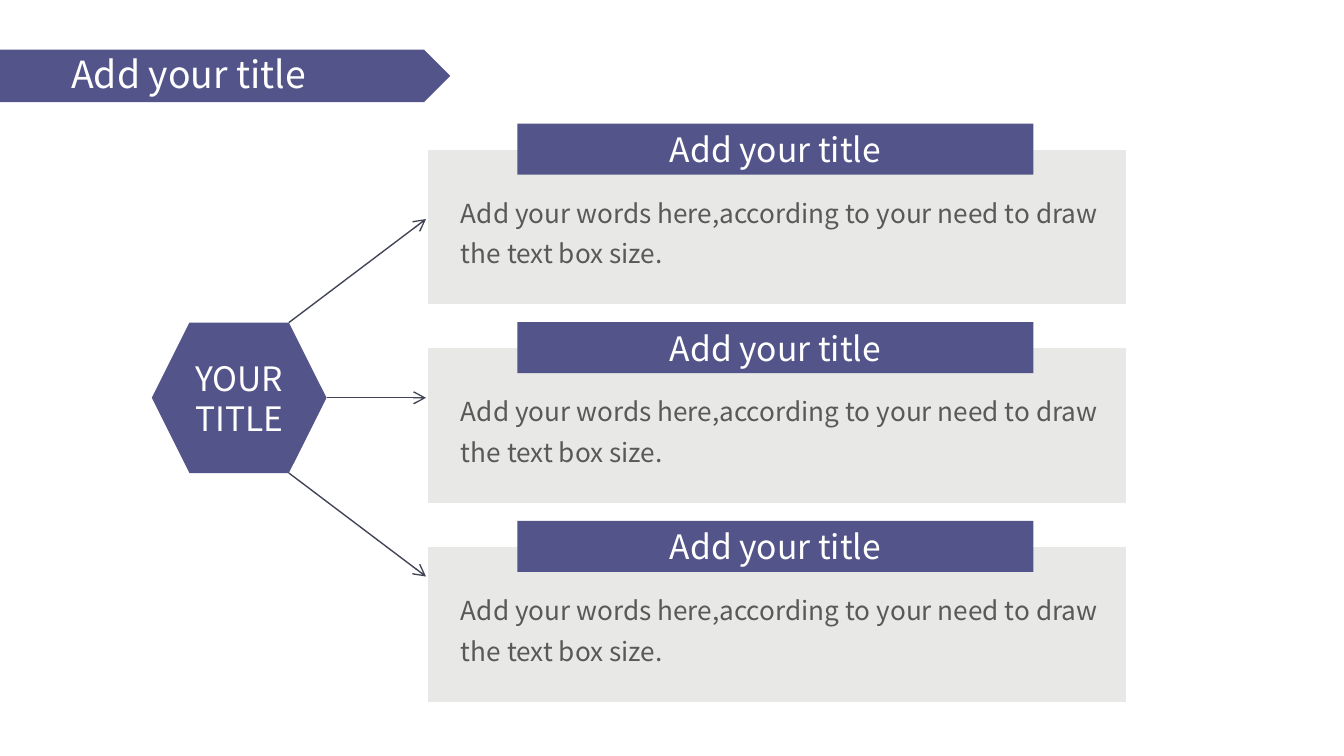
from dataclasses import dataclass
from typing import Optional

from lxml import etree
from pptx import Presentation
from pptx.dml.color import RGBColor
from pptx.enum import shapes, text
from pptx.oxml import ns
from pptx.util import Pt


@dataclass(frozen=True)
class Theme:
    font: str = "Noto Sans CJK JP"
    accent: RGBColor = RGBColor(0x53, 0x54, 0x8A)
    panel: RGBColor = RGBColor(0xE8, 0xE8, 0xE6)
    white: RGBColor = RGBColor(0xFF, 0xFF, 0xFF)
    arrow: RGBColor = RGBColor(0x41, 0x44, 0x55)
    body: RGBColor = RGBColor(0x59, 0x59, 0x59)
    title_size: float = 20
    heading_size: float = 18
    body_size: float = 14


@dataclass(frozen=True)
class Box:
    left: float
    top: float
    width: float
    height: float

    def lengths(self) -> list[Pt]:
        return [Pt(value) for value in (self.left, self.top, self.width, self.height)]


@dataclass(frozen=True)
class Card:
    heading: str
    body: str


@dataclass(frozen=True)
class Arrow:
    start: tuple[float, float]
    end: tuple[float, float]


THEME = Theme()
BODY = "Add your words here,according to your need to draw the text box size."
CARDS = [Card("Add your title", BODY)] * 3
FIRST_CARD_TOP, CARD_PITCH = 66.24, 106.4
HUB = Box(81.36, 172.8, 93.6, 80.64)
HUB_MIDDLE = HUB.top + HUB.height / 2
HUB_CORNER = HUB.left + HUB.width - HUB.height / 4
ARROW_END, ARROW_RISE = 228.24, 95.76
ARROWS = [
    Arrow((HUB_CORNER, HUB.top), (ARROW_END, HUB_MIDDLE - ARROW_RISE)),
    Arrow((HUB.left + HUB.width, HUB_MIDDLE), (ARROW_END, HUB_MIDDLE)),
    Arrow((HUB_CORNER, HUB.top + HUB.height), (ARROW_END, HUB_MIDDLE + ARROW_RISE)),
]


def write(shape, content: str, size: float, color: RGBColor, align, anchor,
          inset: tuple[float, float] = (5.76, 2.88), spacing: float = 1.0) -> None:
    frame = shape.text_frame
    frame.word_wrap = True
    frame.auto_size = text.MSO_AUTO_SIZE.NONE
    frame.vertical_anchor = anchor
    frame.margin_left = frame.margin_right = Pt(inset[0])
    frame.margin_top = frame.margin_bottom = Pt(inset[1])
    frame.text = content
    paragraph = frame.paragraphs[0]
    paragraph.alignment = align
    paragraph.line_spacing = spacing
    paragraph.font.name = THEME.font
    paragraph.font.size = Pt(size)
    paragraph.font.color.rgb = color


def add_block(slide, kind, box: Box, fill: RGBColor, outline: Optional[RGBColor] = None):
    shape = slide.shapes.add_shape(kind, *box.lengths())
    shape.shadow.inherit = False
    shape.fill.solid()
    shape.fill.fore_color.rgb = fill
    if outline is None:
        shape.line.fill.background()
    else:
        shape.line.color.rgb = outline
        shape.line.width = Pt(2)
    return shape


def add_label(slide, kind, box: Box, content: str) -> None:
    shape = add_block(slide, kind, box, THEME.accent)
    write(shape, content, THEME.heading_size, THEME.white,
          text.PP_ALIGN.CENTER, text.MSO_ANCHOR.MIDDLE)


def add_title(slide, content: str) -> None:
    title = slide.shapes.title
    title.left, title.top, title.width, title.height = Box(30.96, 23.76, 194.4, 33.84).lengths()
    write(title, content, THEME.title_size, THEME.white,
          text.PP_ALIGN.LEFT, text.MSO_ANCHOR.TOP, inset=(7.2, 3.6))
    ribbon = add_block(slide, shapes.MSO_SHAPE.PENTAGON, Box(0, 26.64, 241.2, 28.08), THEME.accent)
    title.element.addprevious(ribbon.element)


def add_card(slide, card: Card, top: float) -> None:
    """Draw a panel whose heading bar straddles its upper edge; top is the bar's top."""
    rectangle = shapes.MSO_SHAPE.RECTANGLE
    add_block(slide, rectangle, Box(228.24, top + 12.96, 375.84, 84.96), THEME.panel, THEME.white)
    add_label(slide, rectangle, Box(277.2, top, 276.48, 27.36), card.heading)
    body = slide.shapes.add_textbox(*Box(241.2, top + 31.4, 357.12, 49.68).lengths())
    write(body, card.body, THEME.body_size, THEME.body,
          text.PP_ALIGN.LEFT, text.MSO_ANCHOR.TOP, spacing=1.3)


def add_arrow(slide, arrow: Arrow) -> None:
    points = [Pt(value) for value in (*arrow.start, *arrow.end)]
    connector = slide.shapes.add_connector(shapes.MSO_CONNECTOR.STRAIGHT, *points)
    connector.line.color.rgb = THEME.arrow
    connector.line.width = Pt(0.75)
    etree.SubElement(connector.line._get_or_add_ln(), ns.qn("a:tailEnd"), type="arrow")
    etree.SubElement(connector.element.spPr, ns.qn("a:effectLst"))


def main() -> None:
    presentation = Presentation()
    presentation.slide_width, presentation.slide_height = Pt(720), Pt(405)
    slide = presentation.slides.add_slide(presentation.slide_layouts.get_by_name("Title Only"))
    add_title(slide, "Add your title")
    add_label(slide, shapes.MSO_SHAPE.HEXAGON, HUB, "YOUR TITLE")
    for index, card in enumerate(CARDS):
        add_card(slide, card, FIRST_CARD_TOP + index * CARD_PITCH)
    for arrow in ARROWS:
        add_arrow(slide, arrow)
    presentation.save("out.pptx")


if __name__ == "__main__":
    main()
